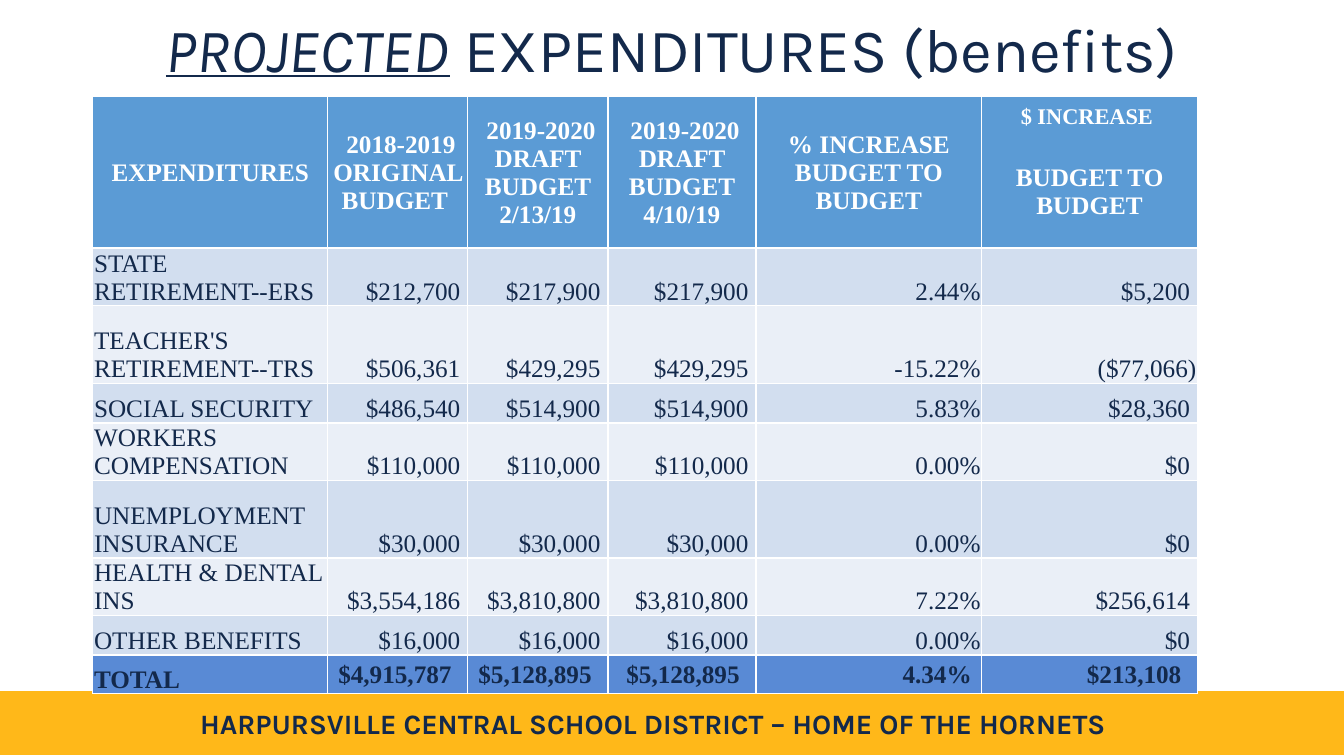
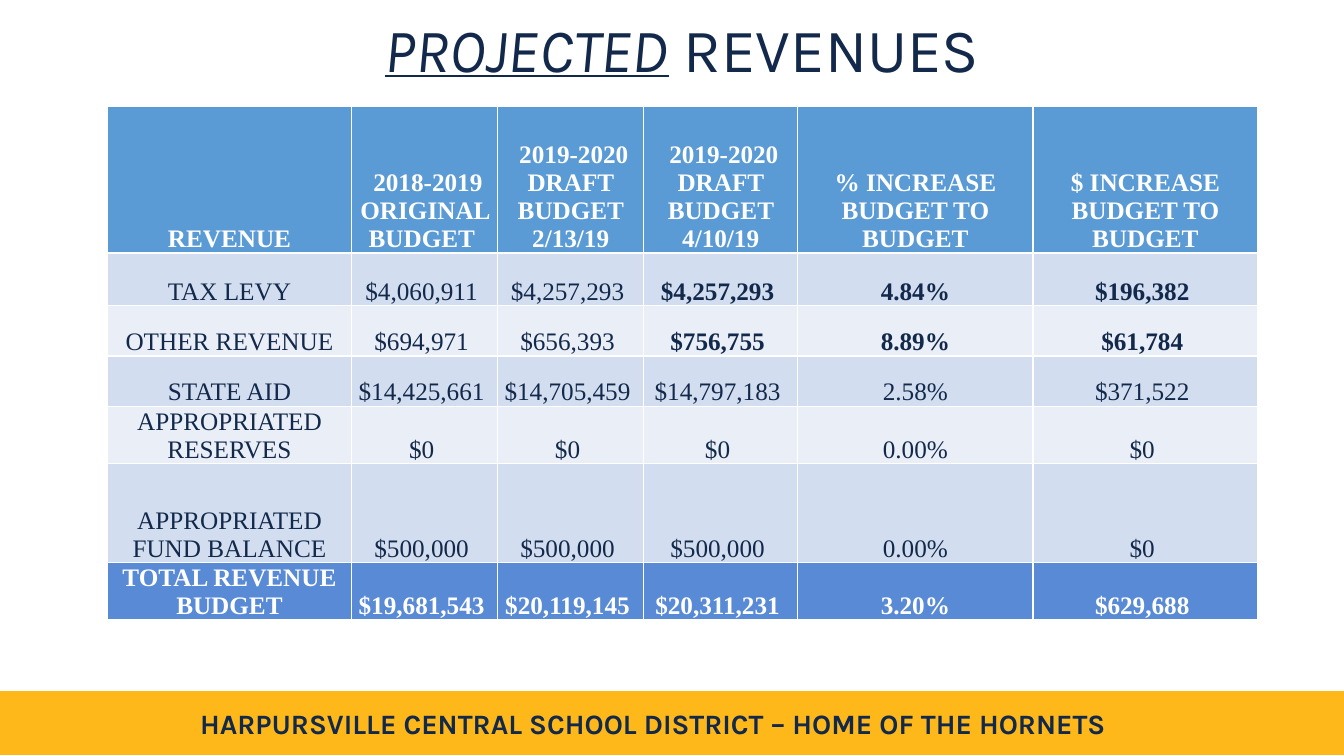
import lxml.etree
import pptx
import pptx.dml.color
import pptx.enum.shapes
import pptx.enum.text
import pptx.oxml
import pptx.oxml.ns
import pptx.util

Cm = pptx.util.Cm
qn = pptx.oxml.ns.qn
ALIGN = pptx.enum.text.PP_ALIGN
ANCHOR = pptx.enum.text.MSO_ANCHOR

EXPENDITURES = [
    ["STATE RETIREMENT--ERS", "$212,700 ", "$217,900 ", "$217,900 ", "2.44%", "$5,200 "],
    ["TEACHER'S RETIREMENT--TRS", "$506,361 ", "$429,295 ", "$429,295 ", "-15.22%", "($77,066)"],
    ["SOCIAL SECURITY", "$486,540 ", "$514,900 ", "$514,900 ", "5.83%", "$28,360 "],
    ["WORKERS COMPENSATION", "$110,000 ", "$110,000 ", "$110,000 ", "0.00%", "$0 "],
    ["UNEMPLOYMENT INSURANCE", "$30,000 ", "$30,000 ", "$30,000 ", "0.00%", "$0 "],
    ["HEALTH & DENTAL INS", "$3,554,186 ", "$3,810,800 ", "$3,810,800 ", "7.22%", "$256,614 "],
    ["OTHER BENEFITS", "$16,000 ", "$16,000 ", "$16,000 ", "0.00%", "$0 "],
    ["TOTAL", "$4,915,787 ", "$5,128,895 ", "$5,128,895 ", "4.34%", "$213,108 "],
]
REVENUES = [
    ["TAX LEVY", "$4,060,911 ", "$4,257,293 ", "$4,257,293 ", "4.84%", "$196,382 "],
    ["OTHER REVENUE", "$694,971 ", "$656,393 ", "$756,755 ", "8.89%", "$61,784 "],
    ["STATE AID", "$14,425,661 ", "$14,705,459 ", "$14,797,183 ", "2.58%", "$371,522 "],
    ["APPROPRIATED RESERVES", "$0 ", "$0 ", "$0 ", "0.00%", "$0 "],
    ["APPROPRIATED FUND BALANCE", "$500,000 ", "$500,000 ", "$500,000 ", "0.00%", "$0 "],
    ["TOTAL REVENUE BUDGET", "$19,681,543 ", "$20,119,145 ", "$20,311,231 ", "3.20%", "$629,688 "],
]
BUDGET_HEADS = [
    " 2018-2019 ORIGINAL BUDGET ",
    " 2019-2020 DRAFT BUDGET 2/13/19",
    " 2019-2020 DRAFT BUDGET 4/10/19",
    "% INCREASE BUDGET TO BUDGET",
]


def rgb(value):
    return pptx.dml.color.RGBColor.from_string(value)


def write(p, text, font, size, color, bold=False, italic=False, underline=False, align=ALIGN.CENTER):
    p.alignment = align
    r = p.add_run()
    r.text = text
    r.font.name = font
    r.font.size = pptx.util.Pt(size)
    r.font.color.rgb = rgb(color)
    r.font.bold, r.font.italic, r.font.underline = bold, italic, underline


class Deck:
    """Holds the budget deck's style and the slide being built."""

    NAVY, GOLD, WHITE = "13294B", "FFB819", "FFFFFF"
    HEAD, TOTAL, BANDS = "5B9BD5", "598AD5", ("D2DEEF", "EAEFF7")
    DISPLAY, BODY = "Karla", "Times New Roman"
    COLUMNS = (5.92, 3.53, 3.53, 3.73, 5.69, 5.44)
    PLAIN_TABLE = "{2D5ABB26-0587-4C30-8999-92F81FD0307C}"

    def __init__(self):
        self.prs = pptx.Presentation()
        self.prs.slide_width, self.prs.slide_height = Cm(33.87), Cm(19.05)

    def add_slide(self, title, title_left):
        self.s = self.prs.slides.add_slide(self.prs.slide_layouts[6])
        self.band()
        p = self.text_box(4.47, 17.68, 23.98, 1.12)
        write(p, "HARPURSVILLE CENTRAL SCHOOL DISTRICT – HOME OF THE HORNETS",
              self.DISPLAY, 20, self.NAVY, bold=True)
        p = self.text_box(title_left, 0, 29.21, 2.64, fill=self.WHITE, anchor=ANCHOR.MIDDLE)
        p.line_spacing = 0.9
        write(p, "PROJECTED", self.DISPLAY, 44, self.NAVY, italic=True, underline=True)
        write(p, " " + title, self.DISPLAY, 44, self.NAVY)

    def band(self):
        sp = self.s.shapes.add_shape(pptx.enum.shapes.MSO_SHAPE.RECTANGLE,
                                     0, Cm(17.42), self.prs.slide_width, Cm(1.6))
        sp.shadow.inherit = False
        sp.fill.solid()
        sp.fill.fore_color.rgb = rgb(self.GOLD)
        sp.line.color.rgb = rgb(self.GOLD)
        sp.line.width = pptx.util.Pt(1)

    def text_box(self, left, top, width, height, fill=None, anchor=ANCHOR.TOP):
        sp = self.s.shapes.add_textbox(Cm(left), Cm(top), Cm(width), Cm(height))
        if fill:
            sp.fill.solid()
            sp.fill.fore_color.rgb = rgb(fill)
        tf = sp.text_frame
        tf.word_wrap = True
        tf.vertical_anchor = anchor
        return tf.paragraphs[0]

    def table(self, left, top, width, heights):
        frame = self.s.shapes.add_table(len(heights), len(self.COLUMNS), Cm(left), Cm(top),
                                        Cm(width), Cm(sum(heights)))
        tbl = frame.table
        tbl._tbl.tblPr.find(qn("a:tableStyleId")).text = self.PLAIN_TABLE
        scale = width / sum(self.COLUMNS)
        for column, size in zip(tbl.columns, self.COLUMNS):
            column.width = Cm(size * scale)
        for row, size in zip(tbl.rows, heights):
            row.height = Cm(size)
        return tbl

    def cell(self, cell, text, fill, anchor=ANCHOR.BOTTOM, right=0.03, top_line=1, bottom_line=1,
             size=18, **style):
        cell.margin_left = cell.margin_top = Cm(0.03)
        cell.margin_right, cell.margin_bottom = Cm(right), 0
        cell.vertical_anchor = anchor
        for side, points in (("L", 1), ("R", 1), ("T", top_line), ("B", bottom_line)):
            self.border(cell, side, points)
        cell.fill.solid()
        cell.fill.fore_color.rgb = rgb(fill)
        p = cell.text_frame.paragraphs[0]
        p.line_spacing = pptx.util.Pt(size + 2)
        if text:
            write(p, text, self.BODY, size, **style)
        end = lxml.etree.SubElement(p._p, qn("a:endParaRPr"), sz=str(size * 100))
        lxml.etree.SubElement(end, qn("a:latin"), typeface=self.BODY)

    def border(self, cell, side, points):
        paint = f'<a:solidFill><a:srgbClr val="{self.WHITE}"/></a:solidFill>' if points else "<a:noFill/>"
        cell._tc.get_or_add_tcPr().append(pptx.oxml.parse_xml(
            f'<a:ln{side} {pptx.oxml.ns.nsdecls("a")} w="{int(points * 12700)}">{paint}</a:ln{side}>'))

    def head_cell(self, cell, text, **options):
        self.cell(cell, text, self.HEAD, color=self.WHITE, bold=True, **options)

    def body(self, tbl, rows, first_row, style_of):
        for i, row in enumerate(rows):
            total = i == len(rows) - 1
            for j, text in enumerate(row):
                options = {"color": self.NAVY, "bold": total, **style_of(i, j, total)}
                self.cell(tbl.cell(first_row + i, j), text,
                          self.TOTAL if total else self.BANDS[i % 2],
                          top_line=1 if i else 1.5, **options)


def expenditure_style(i, j, total):
    if j == 0:
        return {"align": ALIGN.LEFT}
    if total:
        return {"align": ALIGN.RIGHT, "anchor": ANCHOR.MIDDLE, "right": 0.25}
    return {"align": ALIGN.RIGHT}


def revenue_style(i, j, total):
    if total:
        return {"color": Deck.WHITE}
    return {"bold": i < 2 and j > 2}


def expenditures_slide(deck):
    deck.add_slide("EXPENDITURES (benefits)", 2.34)
    tbl = deck.table(2.34, 2.43, 27.84, [0.97, 2.82, 1.42, 1.96, 1, 1.42, 1.96, 1.42, 1, 0.98])
    for j, text in enumerate(["EXPENDITURES"] + BUDGET_HEADS):
        tbl.cell(0, j).merge(tbl.cell(1, j))
        deck.head_cell(tbl.cell(0, j), text, anchor=ANCHOR.MIDDLE, bottom_line=1.5)
        deck.head_cell(tbl.cell(1, j), "", bottom_line=1.5)
    deck.head_cell(tbl.cell(0, 5), "$ INCREASE ", anchor=ANCHOR.MIDDLE, bottom_line=0, size=16)
    deck.head_cell(tbl.cell(1, 5), "BUDGET TO BUDGET", anchor=ANCHOR.MIDDLE,
                   top_line=0, bottom_line=1.5)
    deck.body(tbl, EXPENDITURES, 2, expenditure_style)


def revenues_slide(deck):
    deck.add_slide("REVENUES", 2.59)
    tbl = deck.table(2.7, 2.67, 29, [3.71, 1.32, 1.27, 1.27, 1.42, 2.49, 1.42])
    for j, text in enumerate(["REVENUE"] + BUDGET_HEADS + ["$ INCREASE BUDGET TO BUDGET"]):
        deck.head_cell(tbl.cell(0, j), text, bottom_line=1.5)
    deck.body(tbl, REVENUES, 1, revenue_style)


def main():
    deck = Deck()
    expenditures_slide(deck)
    revenues_slide(deck)
    deck.prs.save("out.pptx")


if __name__ == "__main__":
    main()
